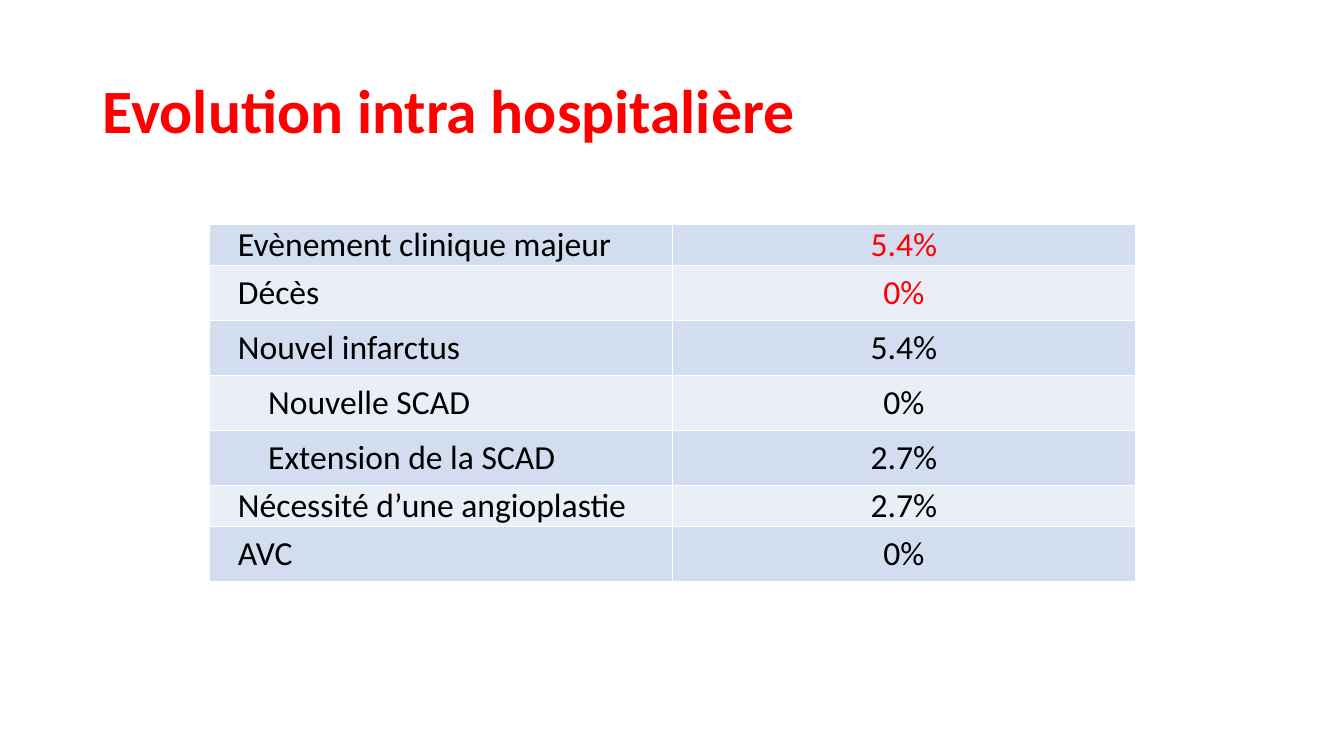
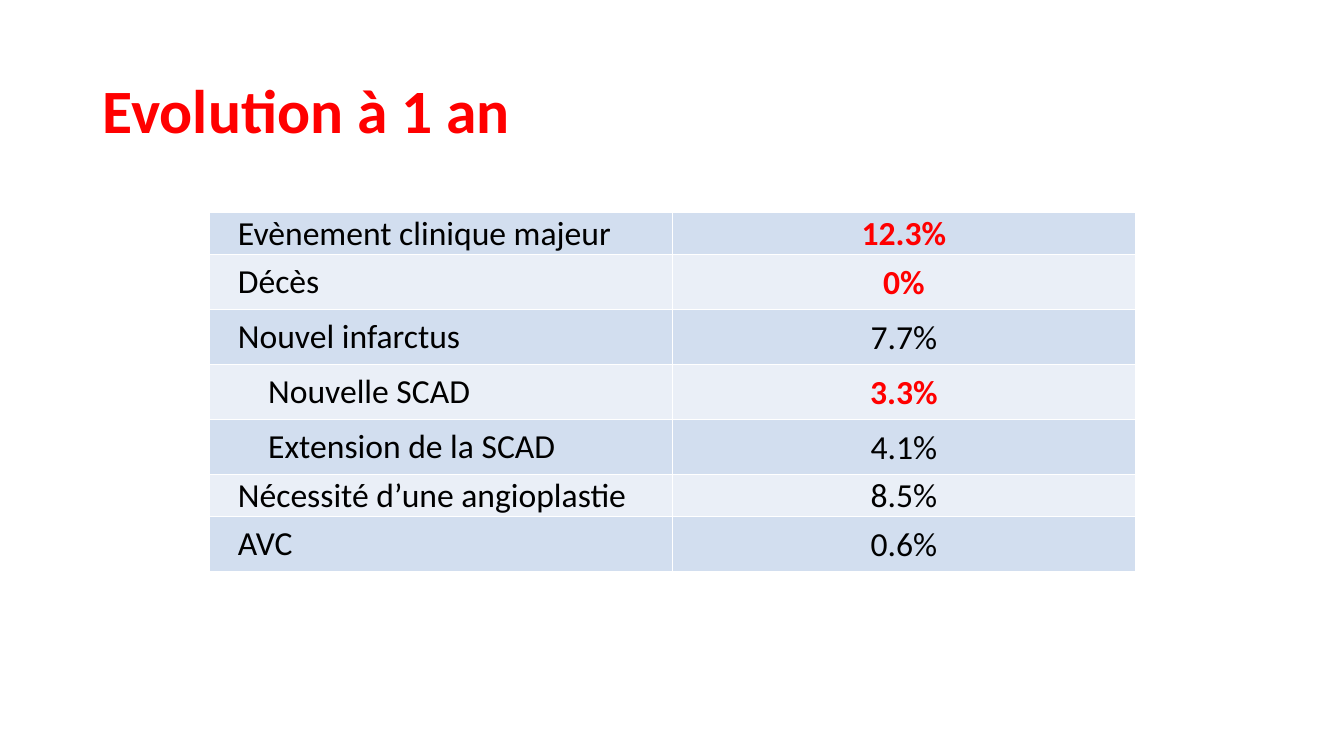
from dataclasses import dataclass

from lxml import etree
from pptx import Presentation
from pptx.dml.color import RGBColor
from pptx.enum.text import MSO_ANCHOR, PP_ALIGN
from pptx.oxml.ns import qn
from pptx.presentation import Presentation as Deck
from pptx.slide import Slide
from pptx.table import _Cell as Cell
from pptx.text.text import Font
from pptx.util import Inches, Pt

LEFT, CENTER = PP_ALIGN.LEFT, PP_ALIGN.CENTER
MIDDLE = MSO_ANCHOR.MIDDLE
TITLE_ONLY = 5

COLORS = {
    "accent": "FF0000",
    "text": "000000",
    "border": "FFFFFF",
    "dark_band": "D2DEEF",
    "light_band": "EAEFF7",
}
FONT_NAME = "Calibri"
BORDER_WIDTH = Pt(1)

# Table geometry, in inches
TABLE_LEFT = 2.08
COLUMN_WIDTH = 4.59
TALL_ROW = 2.73 / 5
SHORT_ROW = 0.4
LABEL_MARGIN = 0.28
SUBLABEL_INDENT = 0.3
SIDE_MARGIN = 0.05


@dataclass(frozen=True)
class Outcome:
    label: str
    height: float = TALL_ROW
    level: int = 0


@dataclass(frozen=True)
class Rate:
    text: str
    accent: bool = False


@dataclass(frozen=True)
class OutcomePage:
    title: str
    table_top: float
    rates: tuple[Rate, ...]
    bold_accent: bool = False
    rate_margin_top: float = 0


OUTCOMES = (
    Outcome("Evènement clinique majeur", height=SHORT_ROW),
    Outcome("Décès"),
    Outcome("Nouvel infarctus"),
    Outcome("Nouvelle SCAD", level=1),
    Outcome("Extension de la SCAD", level=1),
    Outcome("Nécessité d’une angioplastie", height=SHORT_ROW),
    Outcome("AVC"),
)

PAGES = (
    OutcomePage(
        "Evolution intra hospitalière",
        2.23,
        (Rate("5.4%", True), Rate("0%", True), Rate("5.4%"), Rate("0%"),
         Rate("2.7%"), Rate("2.7%"), Rate("0%")),
    ),
    OutcomePage(
        "Evolution à 1 an",
        2.11,
        (Rate("12.3%", True), Rate("0%", True), Rate("7.7%"), Rate("3.3%", True),
         Rate("4.1%"), Rate("8.5%"), Rate("0.6%")),
        bold_accent=True,
        rate_margin_top=0.01,
    ),
)


def rgb(name: str) -> RGBColor:
    return RGBColor.from_string(COLORS[name])


def style_font(font: Font, size: int, color: str, bold: bool = False) -> None:
    font.name = FONT_NAME
    font.size = Pt(size)
    font.bold = bold
    font.color.rgb = rgb(color)


def add_borders(cell: Cell) -> None:
    properties = cell._tc.get_or_add_tcPr()
    for side in ("a:lnL", "a:lnR", "a:lnT", "a:lnB"):
        line = etree.SubElement(properties, qn(side), w=str(BORDER_WIDTH))
        fill = etree.SubElement(line, qn("a:solidFill"))
        etree.SubElement(fill, qn("a:srgbClr"), val=COLORS["border"])


def fill_cell(cell: Cell, text: str, band: str, align: PP_ALIGN,
              margin_left: float, margin_top: float = 0,
              color: str = "text", bold: bool = False) -> None:
    add_borders(cell)
    cell.fill.solid()
    cell.fill.fore_color.rgb = rgb(band)
    cell.vertical_anchor = MIDDLE
    cell.margin_left = Inches(margin_left)
    cell.margin_right = Inches(SIDE_MARGIN)
    cell.margin_top = Inches(margin_top)
    cell.margin_bottom = 0
    para = cell.text_frame.paragraphs[0]
    para.text = text
    para.alignment = align
    style_font(para.runs[0].font, 24, color, bold)


def set_title(slide: Slide, text: str) -> None:
    title = slide.shapes.title
    title.left, title.top = Inches(0.92), Inches(0.4)
    title.width, title.height = Inches(11.5), Inches(1.45)
    title.text_frame.text = text
    title.text_frame.vertical_anchor = MIDDLE
    para = title.text_frame.paragraphs[0]
    para.alignment = LEFT
    para.line_spacing = 0.9
    style_font(para.runs[0].font, 44, "accent", bold=True)


def add_outcome_table(slide: Slide, page: OutcomePage) -> None:
    total_height = sum(outcome.height for outcome in OUTCOMES)
    table = slide.shapes.add_table(
        len(OUTCOMES), 2, Inches(TABLE_LEFT), Inches(page.table_top),
        Inches(2 * COLUMN_WIDTH), Inches(total_height),
    ).table
    table.first_row = False
    table.horz_banding = False
    for index, (outcome, rate) in enumerate(zip(OUTCOMES, page.rates)):
        table.rows[index].height = Inches(outcome.height)
        band = "light_band" if index % 2 else "dark_band"
        fill_cell(table.cell(index, 0), outcome.label, band, LEFT,
                  LABEL_MARGIN + outcome.level * SUBLABEL_INDENT)
        fill_cell(table.cell(index, 1), rate.text, band, CENTER,
                  SIDE_MARGIN, page.rate_margin_top,
                  "accent" if rate.accent else "text",
                  rate.accent and page.bold_accent)


def add_page(deck: Deck, page: OutcomePage) -> None:
    slide = deck.slides.add_slide(deck.slide_layouts[TITLE_ONLY])
    set_title(slide, page.title)
    add_outcome_table(slide, page)


def main() -> None:
    deck = Presentation()
    deck.slide_width, deck.slide_height = Inches(13.33), Inches(7.5)
    for page in PAGES:
        add_page(deck, page)
    deck.save("out.pptx")


if __name__ == "__main__":
    main()
